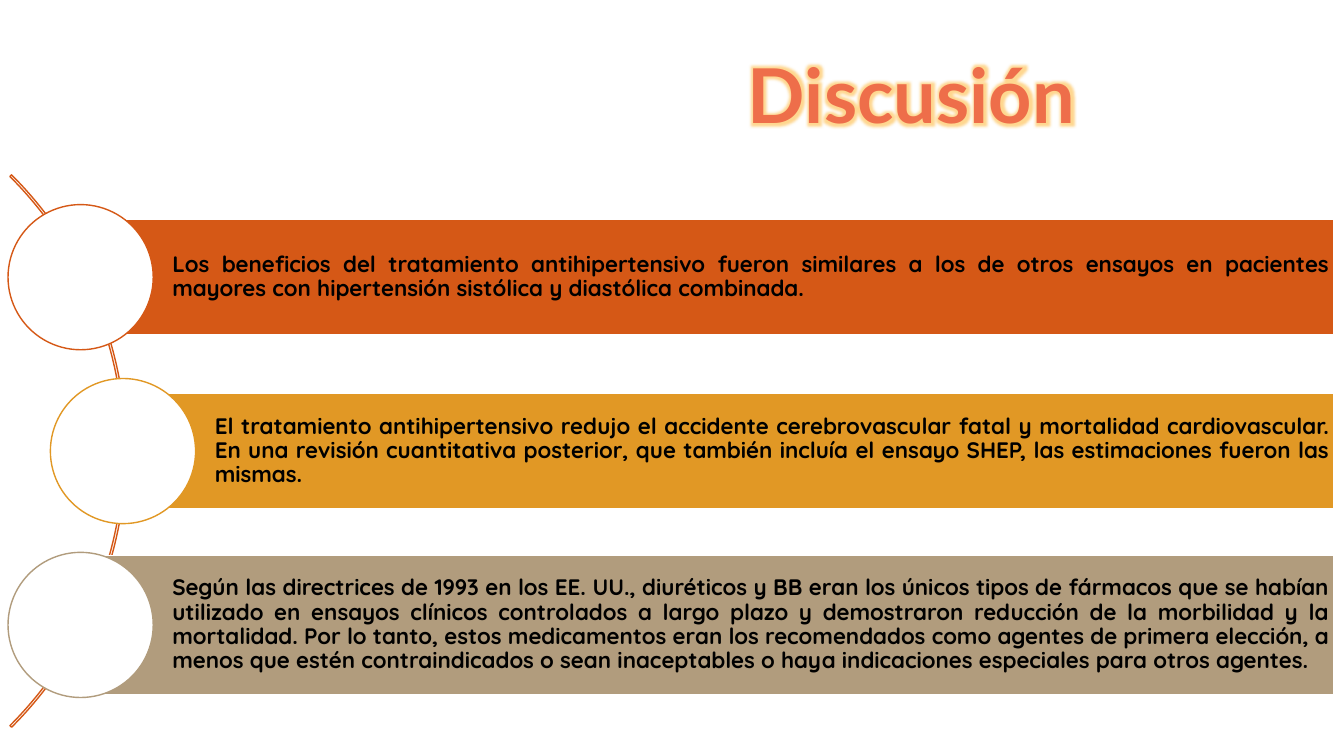
from lxml import etree
from pptx import Presentation
from pptx.dml.color import RGBColor
from pptx.enum.shapes import MSO_SHAPE
from pptx.enum.text import MSO_ANCHOR, PP_ALIGN
from pptx.oxml.ns import qn
from pptx.util import Inches, Pt

ARC, BAR, CIRCLE = MSO_SHAPE.BLOCK_ARC, MSO_SHAPE.RECTANGLE, MSO_SHAPE.OVAL
MIDDLE = MSO_ANCHOR.MIDDLE
CENTER, JUSTIFY = PP_ALIGN.CENTER, PP_ALIGN.JUSTIFY

WHITE, BLACK, ORANGE = "FFFFFF", "000000", "D55816"
DIAMETER = 1.44
BAR_RIGHT = 13.23
FIRST_CENTER, PITCH = 2.75, 1.725

# Circle left, bar height, colour, text
POINTS = [
    (0.08, 1.15, ORANGE,
     "Los beneficios del tratamiento antihipertensivo fueron similares a los de "
     "otros ensayos en pacientes mayores con hipertensión sistólica y diastólica "
     "combinada."),
    (0.5, 1.15, "E19825",
     "El tratamiento antihipertensivo redujo el accidente cerebrovascular fatal y "
     "mortalidad cardiovascular. En una revisión cuantitativa posterior, que también "
     "incluía el ensayo SHEP, las estimaciones fueron las mismas."),
    (0.08, 1.38, "B19C7D",
     "Según las directrices de 1993 en los EE. UU., diuréticos y BB eran los únicos "
     "tipos de fármacos que se habían utilizado en ensayos clínicos controlados a "
     "largo plazo y demostraron reducción de la morbilidad y la mortalidad. Por lo "
     "tanto, estos medicamentos eran los recomendados como agentes de primera "
     "elección, a menos que estén contraindicados o sean inaceptables o haya "
     "indicaciones especiales para otros agentes."),
]


def rgb(color):
    return RGBColor.from_string(color)


def add_outlined(slide, kind, left, top, width, height, line, fill=None):
    shape = slide.shapes.add_shape(
        kind, Inches(left), Inches(top), Inches(width), Inches(height))
    shape.shadow.inherit = False
    if fill:
        shape.fill.solid()
        shape.fill.fore_color.rgb = rgb(fill)
    else:
        shape.fill.background()
    shape.line.color.rgb = rgb(line)
    shape.line.width = Pt(1)
    return shape


def write(shape, text, font, size, color, align):
    frame = shape.text_frame
    frame.word_wrap = True
    frame.vertical_anchor = MIDDLE
    frame.text = text
    paragraph = frame.paragraphs[0]
    paragraph.alignment = align
    run = paragraph.runs[0]
    run.font.name = font
    run.font.size = Pt(size)
    run.font.bold = True
    run.font.color.rgb = rgb(color)
    return paragraph


def add_glow(run, color, radius):
    effects = etree.Element(qn("a:effectLst"))
    glow = etree.SubElement(effects, qn("a:glow"), rad=str(Pt(radius)))
    tint = etree.SubElement(glow, qn("a:srgbClr"), val=color)
    etree.SubElement(tint, qn("a:alpha"), val="60000")
    run.font.fill._xPr.find(qn("a:solidFill")).addnext(effects)


def add_point(slide, center, circle_left, bar_height, color, text):
    bar_left = circle_left + DIAMETER / 2
    bar = add_outlined(slide, BAR, bar_left, center - bar_height / 2,
                       BAR_RIGHT - bar_left, bar_height, WHITE, color)
    paragraph = write(bar, text, "Quicksand", 16, BLACK, JUSTIFY)
    paragraph.line_spacing = 0.9
    frame = bar.text_frame
    frame.margin_left = Inches(0.91)
    frame.margin_top = frame.margin_right = frame.margin_bottom = Inches(0.04)
    add_outlined(slide, CIRCLE, circle_left, center - DIAMETER / 2,
                 DIAMETER, DIAMETER, color, WHITE)


def add_title(slide, text):
    title = slide.shapes.add_textbox(
        Inches(4.77), Inches(0.49), Inches(8.54), Inches(0.87))
    paragraph = write(title, text, "Lato", 54, "EE6E4A", CENTER)
    add_glow(paragraph.runs[0], "FFBD47", 8)


def main():
    prs = Presentation()
    prs.slide_width, prs.slide_height = Inches(13.33), Inches(7.5)
    slide = prs.slides.add_slide(prs.slide_layouts[6])

    # Curve behind the circles
    curve = add_outlined(slide, ARC, -6.5, 0.6, 7.75, 7.75, ORANGE)
    for index, value in enumerate((189, 27, 0.003)):
        curve.adjustments[index] = value

    # Discussion points
    for row, point in enumerate(POINTS):
        add_point(slide, FIRST_CENTER + row * PITCH, *point)

    add_title(slide, "Discusión")
    prs.save("out.pptx")


if __name__ == "__main__":
    main()
